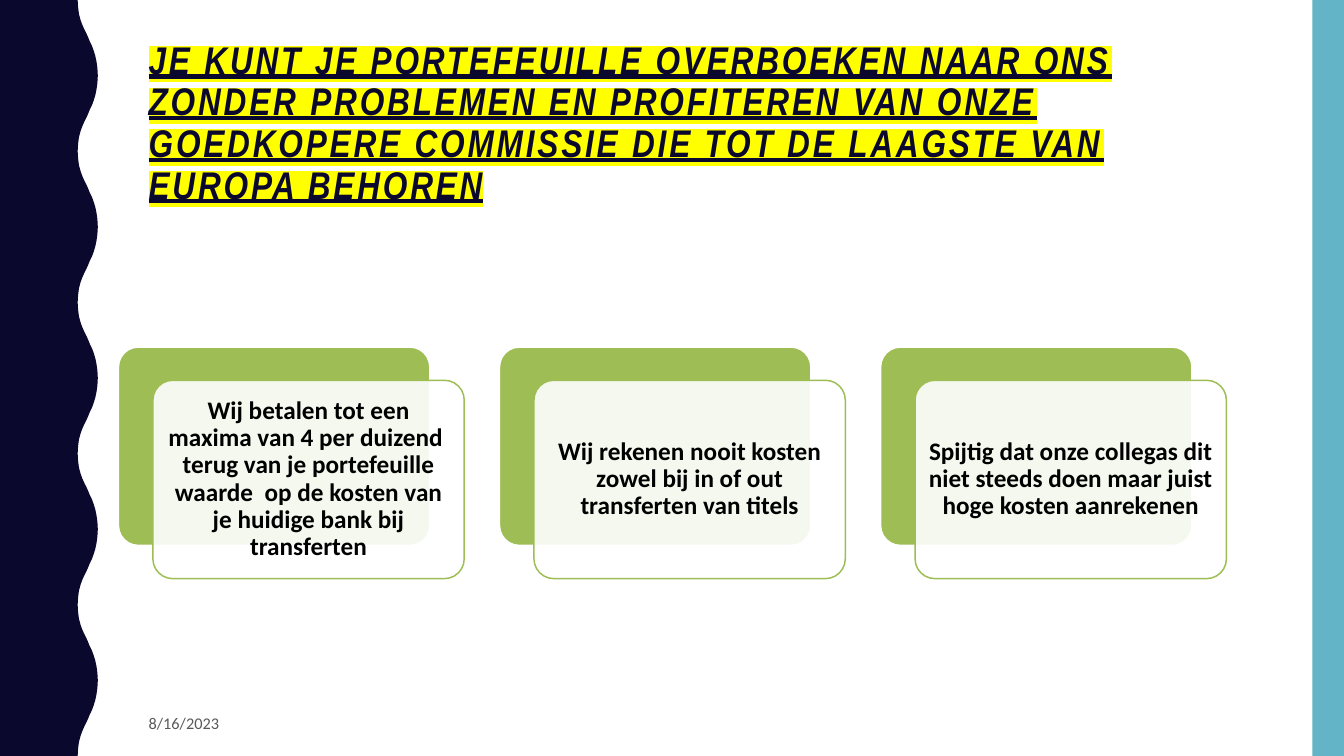
from lxml.etree import SubElement
from pptx import Presentation
from pptx.dml.color import RGBColor
from pptx.enum.shapes import MSO_SHAPE
from pptx.enum.text import MSO_ANCHOR, PP_ALIGN
from pptx.oxml.ns import qn
from pptx.util import Cm, Pt

SLIDE_WIDTH, SLIDE_HEIGHT = 32, 17.99

COLORS = {
    "navy": "0B082E",
    "teal": "62B4C6",
    "green": "9EBE55",
    "white": "FFFFFF",
    "yellow": "FFFF00",
    "gray": "595959",
    "black": "000000",
}

FORMATS = {
    "title": {"name": "Arial Narrow", "size": Pt(26), "bold": True,
              "italic": True, "underline": True},
    "date": {"name": "Calibri", "size": Pt(11)},
    "card": {"name": "Calibri", "size": Pt(17), "bold": True},
}

TITLE = ("JE KUNT JE PORTEFEUILLE OVERBOEKEN NAAR ONS ZONDER PROBLEMEN EN "
         "PROFITEREN VAN ONZE GOEDKOPERE COMMISSIE DIE TOT DE LAAGSTE VAN "
         "EUROPA BEHOREN")
CARD_TEXTS = [
    "Wij betalen tot een maxima van 4 per duizend  terug van je portefeuille "
    "waarde  op de kosten van je huidige bank bij transferten",
    "Wij rekenen nooit kosten zowel bij in of out transferten van titels",
    "Spijtig dat onze collegas dit niet steeds doen maar juist hoge kosten "
    "aanrekenen",
]

# Half a wave from trough to crest: (x, y) in centimetres
WAVE_COUNT = 5
HALF_WAVE = [
    (1.85, 0), (1.86, 0.17), (1.88, 0.33), (1.92, 0.48), (1.96, 0.59),
    (2.01, 0.7), (2.06, 0.8), (2.1, 0.89), (2.14, 0.99), (2.19, 1.09),
    (2.23, 1.2), (2.27, 1.33), (2.3, 1.47), (2.32, 1.62), (2.33, 1.8),
]


def color(name):
    return RGBColor.from_string(COLORS[name])


def style_shape(shape, fill, line=None):
    shape.shadow.inherit = False
    shape.fill.solid()
    shape.fill.fore_color.rgb = color(fill)
    if line:
        shape.line.color.rgb = color(line)
        shape.line.width = Pt(1)
    else:
        shape.line.fill.background()


def write_text(shape, text, style, font_color, alignment=PP_ALIGN.LEFT,
               line_spacing=1.0):
    frame = shape.text_frame
    frame.word_wrap = True
    frame.vertical_anchor = MSO_ANCHOR.MIDDLE
    paragraph = frame.paragraphs[0]
    paragraph.alignment = alignment
    paragraph.line_spacing = line_spacing
    run = paragraph.add_run()
    run.text = text
    for attribute, value in FORMATS[style].items():
        setattr(run.font, attribute, value)
    run.font.color.rgb = color(font_color)
    return run


def add_wave_band(slide, left, top, height):
    period = height / WAVE_COUNT
    wave = HALF_WAVE + [(x, period - y) for x, y in HALF_WAVE[-2:0:-1]]
    edge = [(x, index * period + y)
            for index in range(WAVE_COUNT) for x, y in wave]
    outline = edge + [(HALF_WAVE[0][0], height), (0, height)]
    builder = slide.shapes.build_freeform(Cm(left), Cm(top))
    builder.add_line_segments([(Cm(left + x), Cm(top + y)) for x, y in outline])
    style_shape(builder.convert_to_shape(), "navy")


def add_side_strip(slide, left, top, width, height):
    strip = slide.shapes.add_shape(
        MSO_SHAPE.RECTANGLE, Cm(left), Cm(top), Cm(width), Cm(height))
    style_shape(strip, "teal")


def add_title(slide, left, top, width, height):
    box = slide.shapes.add_textbox(Cm(left), Cm(top), Cm(width), Cm(height))
    run = write_text(box, TITLE, "title", "navy", line_spacing=0.9)
    # Letter spacing and highlight, which must precede the typeface
    properties = run.font._element
    properties.set("spc", "190")
    highlight = SubElement(properties, qn("a:highlight"))
    SubElement(highlight, qn("a:srgbClr"), val=COLORS["yellow"])
    properties.find(qn("a:latin")).addprevious(highlight)


def add_date(slide, left, top, width, height):
    box = slide.shapes.add_textbox(Cm(left), Cm(top), Cm(width), Cm(height))
    write_text(box, "8/16/2023", "date", "gray")


def add_card(slide, left, top, width, height, text):
    shift_x, shift_y = 0.82, 0.79
    size = Cm(width - shift_x), Cm(height - shift_y)

    # Green plate behind
    back = slide.shapes.add_shape(
        MSO_SHAPE.ROUNDED_RECTANGLE, Cm(left), Cm(top), *size)
    style_shape(back, "green", "white")

    # Translucent plate in front, with the text
    front = slide.shapes.add_shape(
        MSO_SHAPE.ROUNDED_RECTANGLE, Cm(left + shift_x), Cm(top + shift_y), *size)
    style_shape(front, "white", "green")
    fill_color = front._element.spPr.find(qn("a:solidFill"))[0]
    SubElement(fill_color, qn("a:alpha"), val="90000")
    for plate in (back, front):
        plate.adjustments[0] = 0.1
    for side in ("left", "top", "right", "bottom"):
        setattr(front.text_frame, f"margin_{side}", Cm(0.18))
    write_text(front, text, "card", "black", PP_ALIGN.CENTER, 0.9)


def add_cards(slide, left, top, width, height):
    gap = 0.84
    card_width = (width - gap * (len(CARD_TEXTS) - 1)) / len(CARD_TEXTS)
    for index, text in enumerate(CARD_TEXTS):
        card_left = left + index * (card_width + gap)
        add_card(slide, card_left, top, card_width, height, text)


def main():
    presentation = Presentation()
    presentation.slide_width = Cm(SLIDE_WIDTH)
    presentation.slide_height = Cm(SLIDE_HEIGHT)
    slide = presentation.slides.add_slide(presentation.slide_layouts[6])

    add_wave_band(slide, 0, 0, SLIDE_HEIGHT)
    add_side_strip(slide, 31.25, 0, 0.75, SLIDE_HEIGHT)
    add_title(slide, 3.29, 1, 26.72, 3.91)
    add_date(slide, 3.29, 16.74, 6.12, 0.91)
    add_cards(slide, 2.82, 8.26, 26.38, 5.51)

    presentation.save("out.pptx")


if __name__ == "__main__":
    main()
